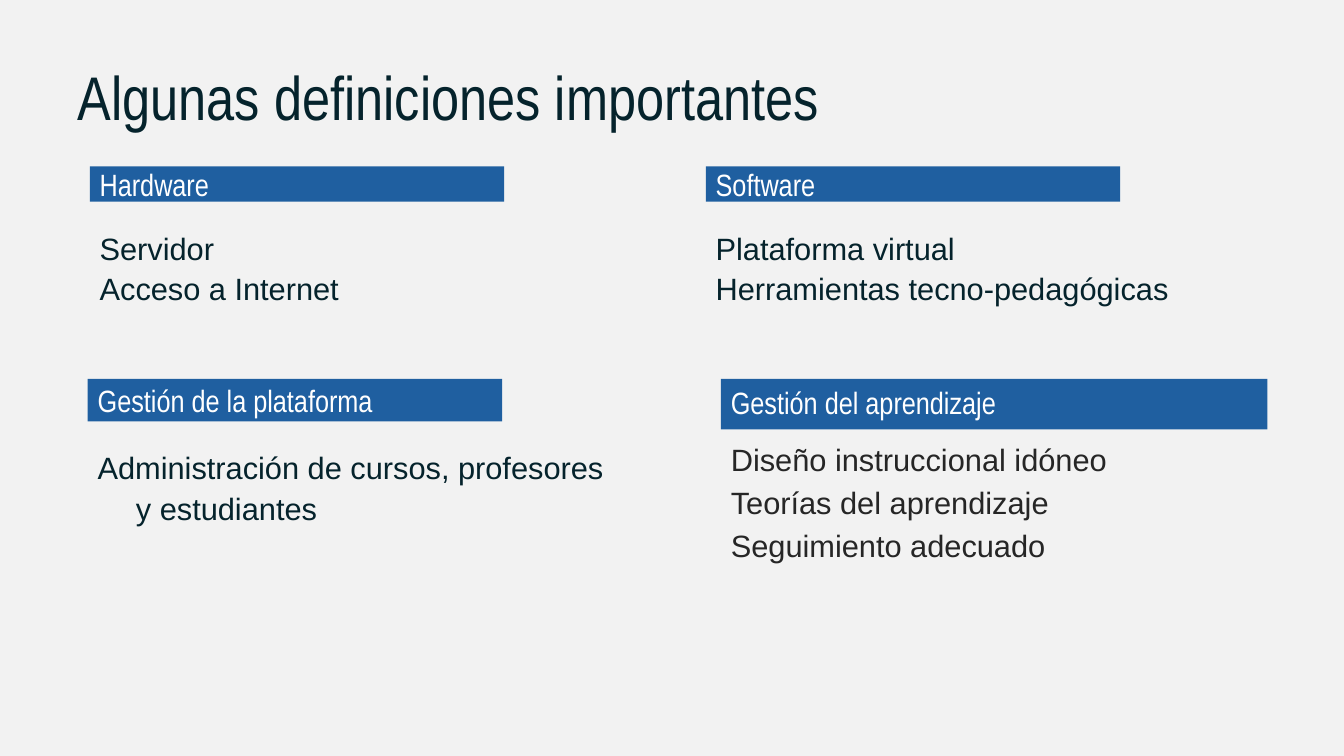
from pptx import Presentation
from pptx import util as u
from pptx.dml.color import RGBColor
from pptx.enum import shapes, text

WIDE, HIGH = 13.33, 7.5
INK, GREY, BLUE, WHITE, PAPER = "05232C", "262626", "1F5FA0", "FFFFFF", "F2F2F2"
HEAD, BODY = "Arial Narrow", "Arial"
MID, TOP = text.MSO_ANCHOR.MIDDLE, text.MSO_ANCHOR.TOP


def paint(color, code):
    color.rgb = RGBColor.from_string(code)


def write(shape, lines, font, size, code, anchor=TOP, hang=0, lead=1.0, gap=0):
    frame = shape.text_frame
    frame.word_wrap = True
    frame.vertical_anchor = anchor
    frame.text = "\n".join(lines)
    for para in frame.paragraphs:
        para.alignment = text.PP_ALIGN.LEFT
        para.line_spacing = lead
        para.space_before = u.Pt(gap)
        para.font.name = font
        para.font.size = u.Pt(size)
        paint(para.font.color, code)
        if hang:
            props = para._p.get_or_add_pPr()
            props.set("marL", str(u.Inches(hang)))
            props.set("indent", str(-u.Inches(hang)))


def title(slide, box, words):
    label = slide.shapes.add_textbox(*map(u.Inches, box))
    write(label, [words], HEAD, 44, INK, MID)


def topic(slide, box, bar, drop, head, lines, anchor=MID, hang=0.38, code=INK, lead=1.1, gap=0):
    left, top, width, height = box
    band = slide.shapes.add_shape(
        shapes.MSO_SHAPE.RECTANGLE, *map(u.Inches, (left, top, *bar)))
    band.shadow.inherit = False
    band.fill.solid()
    paint(band.fill.fore_color, BLUE)
    band.line.fill.background()
    write(band, [head], HEAD, 22, WHITE, anchor, hang, gap=4.4)
    notes = slide.shapes.add_textbox(
        *map(u.Inches, (left, top + drop, width, height - drop)))
    write(notes, lines, BODY, 22, code, TOP, hang, lead, gap)


def main():
    deck = Presentation()
    deck.slide_width, deck.slide_height = u.Inches(WIDE), u.Inches(HIGH)
    slide = deck.slides.add_slide(deck.slide_layouts[6])
    slide.background.fill.solid()
    paint(slide.background.fill.fore_color, PAPER)

    title(slide, (0.67, 0.64, 11.11, 0.62), "Algunas definiciones importantes")
    upper, lower = 1.65, 3.76
    topic(slide, (0.89, upper, 5.33, 1.76), (4.11, 0.35), 0.54,
          "Hardware", ["Servidor", "Acceso a Internet"])
    topic(slide, (7, upper, 5.44, 1.76), (4.11, 0.35), 0.54,
          "Software", ["Plataforma virtual", "Herramientas tecno-pedagógicas"])
    topic(slide, (0.87, lower, 5.33, 2.17), (4.11, 0.42), 0.61,
          "Gestión de la plataforma",
          ["Administración de cursos, profesores y estudiantes"])
    topic(slide, (7.15, lower, 5.58, 2.34), (5.42, 0.5), 0.56,
          "Gestión del aprendizaje",
          ["Diseño instruccional idóneo", "Teorías del aprendizaje", "Seguimiento adecuado"],
          TOP, 0, GREY, 1.0, 4.4)
    deck.save("out.pptx")


if __name__ == "__main__":
    main()
